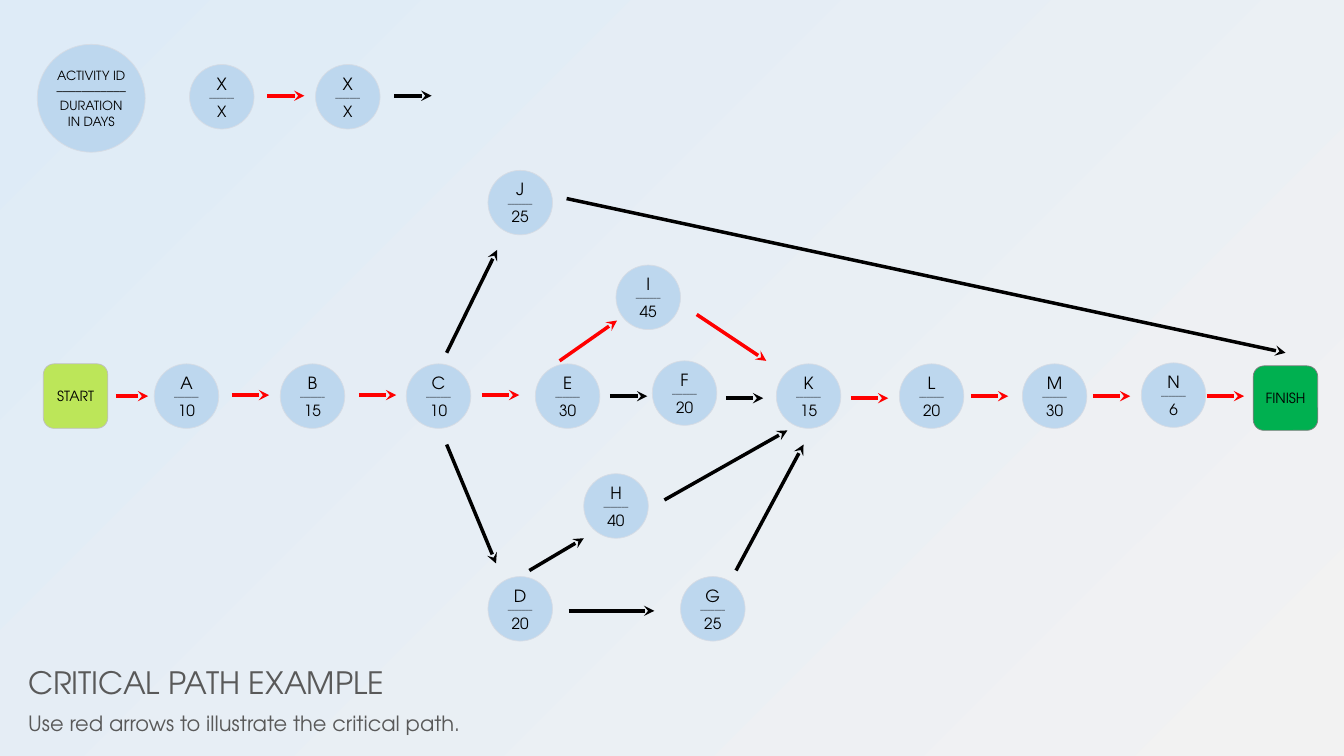
"""Builds the critical path example slide."""
from lxml import etree
from pptx import Presentation
from pptx.dml.color import RGBColor
from pptx.enum.shapes import MSO_CONNECTOR, MSO_SHAPE
from pptx.enum.text import MSO_ANCHOR, MSO_AUTO_SIZE, PP_ALIGN
from pptx.oxml.ns import qn
from pptx.util import Inches, Pt

OVAL, ROUNDED = MSO_SHAPE.OVAL, MSO_SHAPE.ROUNDED_RECTANGLE
STRAIGHT = MSO_CONNECTOR.STRAIGHT
MIDDLE, CENTER, LEFT = MSO_ANCHOR.MIDDLE, PP_ALIGN.CENTER, PP_ALIGN.LEFT
GROW = MSO_AUTO_SIZE.SHAPE_TO_FIT_TEXT

BLACK = RGBColor(0x00, 0x00, 0x00)
RED = RGBColor(0xFF, 0x00, 0x00)
GREY = RGBColor(0x59, 0x59, 0x59)
PALE_GREY = RGBColor(0xF2, 0xF2, 0xF2)
PALE_BLUE = RGBColor(0xDE, 0xEB, 0xF7)
BLUE = RGBColor(0xBD, 0xD7, 0xEE)
BLUE_EDGE = RGBColor(0xD6, 0xDC, 0xE5)
LIME = RGBColor(0xBC, 0xE6, 0x59)
LIME_EDGE = RGBColor(0xBF, 0xBF, 0xBF)
GREEN = RGBColor(0x00, 0xB0, 0x50)
GREEN_EDGE = RGBColor(0x80, 0x80, 0x80)

FONT = "TeX Gyre Adventor"
NODE = 0.64
ROW = 3.61
STEP = 0.37
CAPTION_FRAME = {"margin_left": 0, "margin_top": Inches(0.05),
                 "margin_right": Inches(0.1), "margin_bottom": Inches(0.05),
                 "auto_size": GROW}
NODE_FRAME = {"margin_left": 0, "margin_top": 0, "margin_right": 0,
              "margin_bottom": 0, "vertical_anchor": MIDDLE, "word_wrap": True}

ACTIVITIES = [
    ("X", "X", 1.88, 0.64), ("X", "X", 3.13, 0.64),
    ("A", "10", 1.53, ROW), ("B", "15", 2.78, ROW), ("C", "10", 4.03, ROW),
    ("D", "20", 4.84, 5.72), ("E", "30", 5.31, ROW), ("F", "20", 6.47, 3.58),
    ("G", "25", 6.75, 5.72), ("H", "40", 5.79, 4.7), ("I", "45", 6.11, 2.63),
    ("J", "25", 4.84, 1.69), ("K", "15", 7.7, ROW), ("L", "20", 8.92, ROW),
    ("M", "30", 10.14, ROW), ("N", "6", 11.32, 3.6),
]
SHORT_ARROWS = [
    (2.65, 0.95, RED), (3.91, 0.95, BLACK),
    (2.3, 3.92, RED), (3.56, 3.92, RED), (4.78, 3.92, RED),
    (6.05, 3.93, BLACK), (7.2, 3.95, BLACK), (8.44, 3.95, RED),
    (9.63, 3.93, RED), (10.84, 3.93, RED), (11.97, 3.93, RED),
]
LONG_ARROWS = [
    (1.15, 3.93, 1.47, 3.93, RED),
    (5.55, 3.58, 6.12, 3.18, RED), (6.91, 3.12, 7.6, 3.58, RED),
    (4.43, 3.5, 4.93, 2.48, BLACK), (5.62, 1.97, 12.75, 3.5, BLACK),
    (4.43, 4.41, 4.92, 5.59, BLACK), (5.25, 5.66, 5.79, 5.34, BLACK),
    (5.64, 6.06, 6.49, 6.06, BLACK), (7.3, 5.66, 7.97, 4.41, BLACK),
    (6.59, 4.96, 7.81, 4.27, BLACK),
]


def apply_format(target, values):
    """Set each named attribute on the target."""
    for name, value in values.items():
        setattr(target, name, value)


class Diagram:
    """Draws network diagram elements on one slide in a shared style."""

    def __init__(self, slide, font):
        """Keep the slide and the font."""
        self.slide = slide
        self.font = font

    def background(self, start, end, angle, start_opacity):
        """Fill the background with a two-colour gradient."""
        fill = self.slide.background.fill
        fill.gradient()
        fill.gradient_angle = angle
        for stop, position, color in zip(fill.gradient_stops, (0, 1), (start, end)):
            stop.position = position
            stop.color.rgb = color
        first = next(self.slide.element.iter(qn("a:gs")))
        etree.SubElement(first[0], qn("a:alpha"), val=str(start_opacity * 1000))

    def add_lines(self, frame, lines, color, align, frame_format):
        """Add (text, size) lines as paragraphs."""
        apply_format(frame, frame_format)
        for index, (text, size) in enumerate(lines):
            paragraph = frame.add_paragraph() if index else frame.paragraphs[0]
            paragraph.alignment = align
            run = paragraph.add_run()
            run.text = text
            apply_format(run.font, {"name": self.font, "size": Pt(size)})
            run.font.color.rgb = color

    def caption(self, text, size, box, wrap):
        """Add a left-aligned line of text."""
        caption = self.slide.shapes.add_textbox(*map(Inches, box))
        self.add_lines(caption.text_frame, [(text, size)], GREY, LEFT,
                       {**CAPTION_FRAME, "word_wrap": wrap})

    def node(self, lines, left, top, size=NODE, kind=OVAL, fill=BLUE, edge=BLUE_EDGE):
        """Add a filled node with centred lines of text."""
        node = self.slide.shapes.add_shape(kind, *map(Inches, (left, top, size, size)))
        node.shadow.inherit = False
        node.fill.solid()
        node.fill.fore_color.rgb = fill
        node.line.color.rgb = edge
        node.line.width = Pt(0.5)
        self.add_lines(node.text_frame, lines, BLACK, CENTER, NODE_FRAME)

    def activity(self, label, days, left, top):
        """Add an activity node with its duration under a rule."""
        self.node([(label, 12), ("–––––––", 5), (days, 11)], left, top)

    def arrow(self, x1, y1, x2, y2, color):
        """Add a straight arrow."""
        arrow = self.slide.shapes.add_connector(STRAIGHT, *map(Inches, (x1, y1, x2, y2)))
        arrow.line.color.rgb = color
        arrow.line.width = Pt(2.5)
        properties = arrow.element.spPr
        etree.SubElement(properties.find(qn("a:ln")), qn("a:tailEnd"), type="stealth")
        etree.SubElement(properties, qn("a:effectLst"))


def main():
    """Build and save the slide."""
    deck = Presentation()
    apply_format(deck, {"slide_width": Inches(13.33), "slide_height": Inches(7.5)})
    diagram = Diagram(deck.slides.add_slide(deck.slide_layouts[6]), FONT)
    diagram.background(PALE_GREY, PALE_BLUE, 135, 40)
    diagram.caption("CRITICAL PATH EXAMPLE", 22, (0.28, 6.54, 4.74, 0.47), True)
    diagram.caption("Use red arrows to illustrate the critical path.", 15,
                    (0.28, 7, 4.47, 0.35), False)
    diagram.node([("ACTIVITY ID", 9), ("–––––––––––", 9), ("DURATION IN DAYS", 9)],
                 0.37, 0.44, 1.07)
    diagram.node([("START", 10)], 0.43, ROW, NODE, ROUNDED, LIME, LIME_EDGE)
    diagram.node([("FINISH", 10)], 12.43, 3.63, NODE, ROUNDED, GREEN, GREEN_EDGE)
    for activity in ACTIVITIES:
        diagram.activity(*activity)
    for x, y, color in SHORT_ARROWS:
        diagram.arrow(x, y, x + STEP, y, color)
    for arrow in LONG_ARROWS:
        diagram.arrow(*arrow)
    deck.save("out.pptx")


if __name__ == "__main__":
    main()
